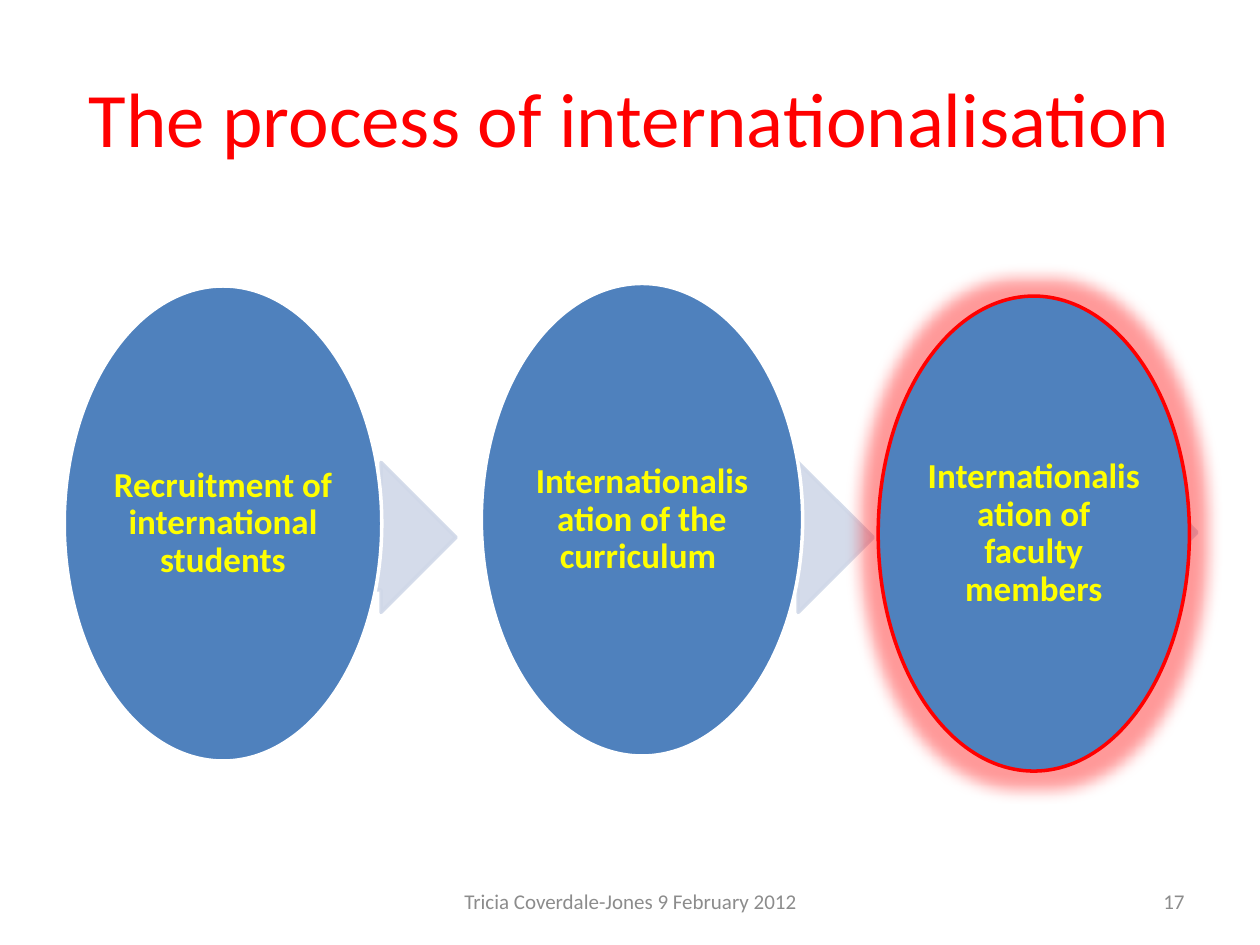
"""Build the slide on the process of internationalisation."""
from lxml import etree
from pptx import Presentation
from pptx.dml.color import RGBColor
from pptx.enum.shapes import MSO_SHAPE
from pptx.enum.text import MSO_ANCHOR, PP_ALIGN
from pptx.oxml.ns import qn
from pptx.util import Inches, Pt

OVAL, ARROW = MSO_SHAPE.OVAL, MSO_SHAPE.RIGHT_ARROW
MIDDLE = MSO_ANCHOR.MIDDLE
CENTER, RIGHT = PP_ALIGN.CENTER, PP_ALIGN.RIGHT
FONT = "Calibri"
RED, BLUE, PALE, YELLOW, WHITE, GREY = "FF0000", "4F81BD", "D0D8E8", "FFFF00", "FFFFFF", "8C8C8C"

TITLE = "The process of internationalisation"
STAGES = [
    {"text": "Recruitment of international students", "line": WHITE,
     "oval": (0.51, 2.27, 2.52, 3.77), "arrow": (1.46, 3.67, 2.16, 1.19)},
    {"text": "Internationalisation of the curriculum ", "line": WHITE,
     "oval": (3.82, 2.25, 2.55, 3.75), "arrow": (4.45, 3.67, 2.48, 1.19)},
    {"text": "Internationalisation of faculty members", "line": RED, "glow": RED,
     "oval": (6.97, 2.35, 2.47, 3.77), "arrow": (8.13, 3.63, 1.37, 1.19)},
]
FOOTERS = [
    ("17", (7.17, 6.95, 2.33, 0.4), RIGHT),
    ("Tricia Coverdale-Jones 9 February 2012", (3.42, 6.95, 3.17, 0.4), CENTER),
]


def color(value):
    return RGBColor.from_string(value)


def box(values):
    return [Inches(value) for value in values]


def write(shape, text, size, text_color, alignment, bold=False):
    frame = shape.text_frame
    frame.text = text
    frame.word_wrap = True
    frame.vertical_anchor = MIDDLE
    paragraph = frame.paragraphs[0]
    paragraph.alignment = alignment
    font = paragraph.runs[0].font
    font.name, font.size, font.bold = FONT, Pt(size), bold
    font.color.rgb = color(text_color)
    return frame


def add_shape(slide, kind, place, fill, line):
    shape = slide.shapes.add_shape(kind, *box(place))
    shape.shadow.inherit = False
    shape.fill.solid()
    shape.fill.fore_color.rgb = color(fill)
    shape.line.color.rgb = color(line)
    shape.line.width = Pt(2)
    return shape


def add_arrow(slide, place):
    arrow = add_shape(slide, ARROW, place, PALE, PALE)
    arrow.adjustments[0], arrow.adjustments[1] = 0.7, 0.5
    for element in arrow._element.spPr.iter(qn("a:srgbClr")):
        etree.SubElement(element, qn("a:alpha"), val="90000")


def add_glow(shape, glow_color):
    effects = shape._element.spPr.find(qn("a:effectLst"))
    glow = etree.SubElement(effects, qn("a:glow"), rad=str(Pt(18)))
    tint = etree.SubElement(glow, qn("a:srgbClr"), val=glow_color)
    etree.SubElement(tint, qn("a:alpha"), val="40000")


def add_stage(slide, stage):
    add_arrow(slide, stage["arrow"])
    oval = add_shape(slide, OVAL, stage["oval"], BLUE, stage["line"])
    frame = write(oval, stage["text"], 20, YELLOW, CENTER, bold=True)
    frame.margin_left = frame.margin_right = Inches(0.01)
    frame.margin_top = frame.margin_bottom = Inches(0.01)
    frame.paragraphs[0].line_spacing = 0.9
    if "glow" in stage:
        add_glow(oval, stage["glow"])


def main():
    presentation = Presentation()
    presentation.slide_width, presentation.slide_height = Inches(10), Inches(7.5)
    slide = presentation.slides.add_slide(presentation.slide_layouts[5])
    title = slide.shapes.title
    title.left, title.top, title.width, title.height = box((0.5, 0.3, 9, 1.25))
    write(title, TITLE, 44, RED, CENTER)
    for stage in STAGES:
        add_stage(slide, stage)
    for text, place, alignment in FOOTERS:
        write(slide.shapes.add_textbox(*box(place)), text, 12, GREY, alignment)
    presentation.save("out.pptx")


if __name__ == "__main__":
    main()
